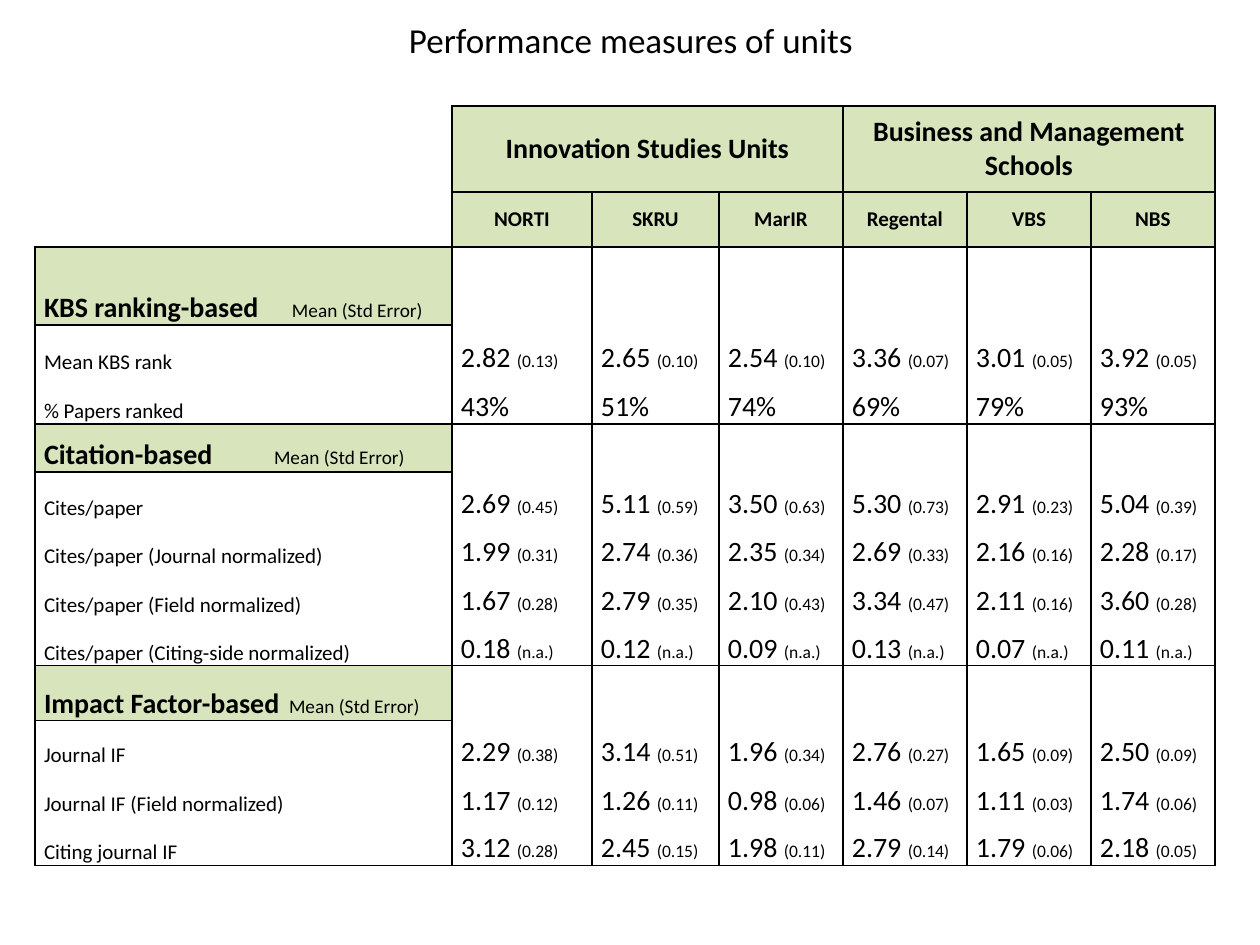
from dataclasses import dataclass

from lxml import etree
from pptx import Presentation
from pptx.dml.color import RGBColor
from pptx.enum import text
from pptx.oxml import ns
from pptx.util import Pt


@dataclass(frozen=True)
class Theme:
    font: str = "Calibri"
    ink: str = "000000"
    green: str = "D7E4BC"
    title: float = 20
    head: float = 16
    label: float = 12
    note: float = 11
    error: float = 10


THEME = Theme()
EMU_PER_PX = 914400 / 126
COLUMNS = [417, 140, 127] + [124] * 4
ROWS = [86, 55, 78, 50, 49, 48, 49, 48, 49, 48, 55, 48, 49, 48]
GROUPS = [(1, "Innovation Studies Units"), (4, "Business and Management Schools")]
UNITS = ["NORTI", "SKRU", "MarIR", "Regental", "VBS", "NBS"]
NOTE = "Mean (Std Error)"
SECTIONS = [
    ("KBS ranking-based", 248, [
        ("Mean KBS rank", "2.82 (0.13)|2.65 (0.10)|2.54 (0.10)|3.36 (0.07)|3.01 (0.05)|3.92 (0.05)"),
        ("% Papers ranked", "43%|51%|74%|69%|79%|93%"),
    ]),
    ("Citation-based", 230, [
        ("Cites/paper", "2.69 (0.45)|5.11 (0.59)|3.50 (0.63)|5.30 (0.73)|2.91 (0.23)|5.04 (0.39)"),
        ("Cites/paper (Journal normalized)",
         "1.99 (0.31)|2.74 (0.36)|2.35 (0.34)|2.69 (0.33)|2.16 (0.16)|2.28 (0.17)"),
        ("Cites/paper (Field normalized)",
         "1.67 (0.28)|2.79 (0.35)|2.10 (0.43)|3.34 (0.47)|2.11 (0.16)|3.60 (0.28)"),
        ("Cites/paper (Citing-side normalized)",
         "0.18 (n.a.)|0.12 (n.a.)|0.09 (n.a.)|0.13 (n.a.)|0.07 (n.a.)|0.11 (n.a.)"),
    ]),
    ("Impact Factor-based", 245, [
        ("Journal IF", "2.29 (0.38)|3.14 (0.51)|1.96 (0.34)|2.76 (0.27)|1.65 (0.09)|2.50 (0.09)"),
        ("Journal IF (Field normalized)",
         "1.17 (0.12)|1.26 (0.11)|0.98 (0.06)|1.46 (0.07)|1.11 (0.03)|1.74 (0.06)"),
        ("Citing journal IF", "3.12 (0.28)|2.45 (0.15)|1.98 (0.11)|2.79 (0.14)|1.79 (0.06)|2.18 (0.05)"),
    ]),
]


def px(n):
    return round(n * EMU_PER_PX)


def apply(target, values):
    for name, value in values.items():
        setattr(target, name, value)


def write(p, runs, align=text.PP_ALIGN.LEFT):
    p.alignment = align
    for words, size, bold in runs:
        r = p.add_run()
        r.text = words
        apply(r.font, {"name": THEME.font, "size": Pt(size), "bold": bold})
        r.font.color.rgb = RGBColor.from_string(THEME.ink)


def add_tab(p, position):
    tabs = etree.SubElement(p._p.get_or_add_pPr(), ns.qn("a:tabLst"))
    etree.SubElement(tabs, ns.qn("a:tab"), pos=str(px(position)), algn="l")


def set_borders(cell, sides):
    props = cell._tc.get_or_add_tcPr()
    for index, side in enumerate("LRTB"):
        line = etree.Element(ns.qn(f"a:ln{side}"), w=str(Pt(1)))
        if side in sides:
            fill = etree.SubElement(line, ns.qn("a:solidFill"))
            etree.SubElement(fill, ns.qn("a:srgbClr"), val=THEME.ink)
        else:
            etree.SubElement(line, ns.qn("a:noFill"))
        props.insert(index, line)


def format_cell(cell, sides, filled=False, anchor=text.MSO_ANCHOR.BOTTOM):
    apply(cell, {"margin_left": px(9), "margin_right": px(9), "margin_top": 0,
                 "margin_bottom": 0, "vertical_anchor": anchor})
    if filled:
        cell.fill.solid()
        cell.fill.fore_color.rgb = RGBColor.from_string(THEME.green)
    else:
        cell.fill.background()
    set_borders(cell, sides)


def add_title(s, words):
    tf = s.shapes.add_textbox(px(64), 0, px(1134), px(79)).text_frame
    apply(tf, {"word_wrap": True, "vertical_anchor": text.MSO_ANCHOR.MIDDLE})
    write(tf.paragraphs[0], [(words, THEME.title, False)], text.PP_ALIGN.CENTER)


def add_grid(s):
    frame = s.shapes.add_table(len(ROWS), len(COLUMNS), px(35), px(106),
                               px(sum(COLUMNS)), px(sum(ROWS)))
    table = frame.table
    apply(table, {"first_row": False, "horz_banding": False})
    for column, width in zip(table.columns, COLUMNS):
        column.width = px(width)
    for row, height in zip(table.rows, ROWS):
        row.height = px(height)
    return table


def fill_header(table):
    format_cell(table.cell(0, 0), "R")
    format_cell(table.cell(1, 0), "RB")
    for row in (0, 1):
        for column in range(1, len(COLUMNS)):
            format_cell(table.cell(row, column), "LRTB", True, text.MSO_ANCHOR.MIDDLE)
    for column, name in GROUPS:
        cell = table.cell(0, column)
        cell.merge(table.cell(0, column + 2))
        write(cell.text_frame.paragraphs[0], [(name, THEME.head, True)], text.PP_ALIGN.CENTER)
    for column, name in enumerate(UNITS, 1):
        write(table.cell(1, column).text_frame.paragraphs[0],
              [(name, THEME.label, True)], text.PP_ALIGN.CENTER)


def fill_heading(table, row, name, tab):
    cell = table.cell(row, 0)
    format_cell(cell, "LRTB", True)
    p = cell.text_frame.paragraphs[0]
    write(p, [(name, THEME.head, True), ("\t" + NOTE, THEME.note, False)])
    add_tab(p, tab)
    for column in range(1, len(COLUMNS)):
        format_cell(table.cell(row, column), "LRT")


def fill_measure(table, row, label, values, first, last):
    bottom = "B" if last else ""
    cell = table.cell(row, 0)
    format_cell(cell, "LR" + ("T" if first else "") + bottom)
    write(cell.text_frame.paragraphs[0], [(label, THEME.label, False)])
    for column, value in enumerate(values.split("|"), 1):
        cell = table.cell(row, column)
        format_cell(cell, "LR" + bottom)
        mean, gap, error = value.partition(" ")
        runs = [(mean + gap, THEME.head, False)]
        if error:
            runs.append((error, THEME.error, False))
        write(cell.text_frame.paragraphs[0], runs)


def main():
    prs = Presentation()
    apply(prs, {"slide_width": px(1260), "slide_height": px(945)})
    s = prs.slides.add_slide(prs.slide_layouts[6])
    add_title(s, "Performance measures of units")
    table = add_grid(s)
    fill_header(table)
    row = 2
    for name, tab, measures in SECTIONS:
        fill_heading(table, row, name, tab)
        for index, (label, values) in enumerate(measures, 1):
            fill_measure(table, row + index, label, values, index == 1, index == len(measures))
        row += len(measures) + 1
    prs.save("out.pptx")


if __name__ == "__main__":
    main()
